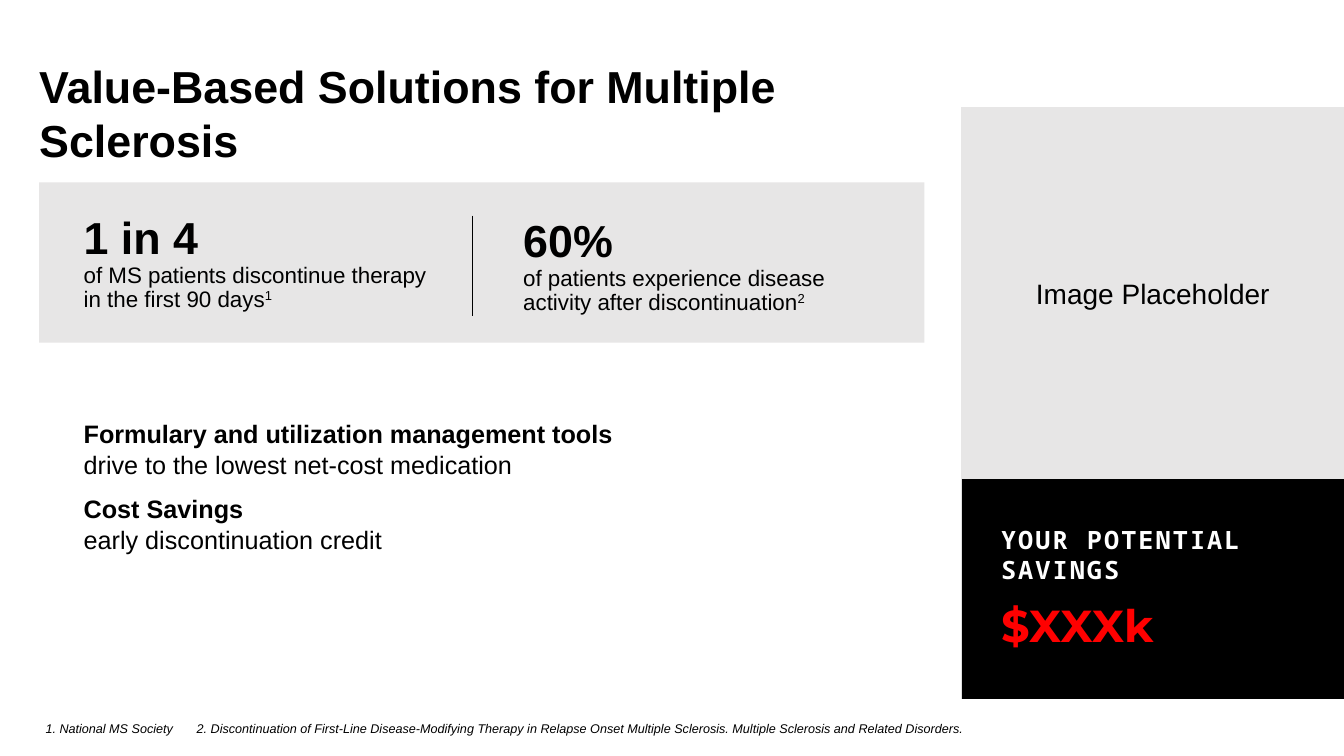
from dataclasses import dataclass

from lxml import etree
from pptx import Presentation
from pptx.dml.color import RGBColor
from pptx.enum.shapes import MSO_CONNECTOR, MSO_SHAPE
from pptx.enum.text import MSO_ANCHOR, PP_ALIGN
from pptx.oxml.ns import qn
from pptx.shapes.autoshape import Shape
from pptx.slide import Slide
from pptx.text.text import TextFrame
from pptx.util import Pt

RECT, STRAIGHT = MSO_SHAPE.RECTANGLE, MSO_CONNECTOR.STRAIGHT
TOP, MIDDLE, BOTTOM = MSO_ANCHOR.TOP, MSO_ANCHOR.MIDDLE, MSO_ANCHOR.BOTTOM
CENTER = PP_ALIGN.CENTER

BLACK = RGBColor(0x00, 0x00, 0x00)
WHITE = RGBColor(0xFF, 0xFF, 0xFF)
GREY = RGBColor(0xE7, 0xE6, 0xE6)
RED = RGBColor(0xFF, 0x00, 0x00)

BREAK = "\n"
MARGIN, INDENT = 28, 59.75
SIDE_LEFT, SIDE_WIDTH = 687, 273


@dataclass
class Run:
    text: str
    size: float
    bold: bool = False
    italic: bool = False
    color: RGBColor = BLACK
    font: str = "Arial"
    spacing: float = 0
    superscript: bool = False


@dataclass
class Para:
    runs: list[Run]
    format: dict
    tab: float = 0


@dataclass
class Box:
    left: float
    top: float
    width: float
    height: float


@dataclass
class TextBox:
    box: Box
    paras: list[Para]
    anchor: MSO_ANCHOR = TOP
    insets: tuple[float, float, float, float] = (0, 0, 0, 0)


@dataclass
class Panel:
    box: Box
    fill: RGBColor


def fill_text(tf: TextFrame, paras: list[Para]) -> None:
    for i, para in enumerate(paras):
        p = tf.paragraphs[0] if i == 0 else tf.add_paragraph()
        for name, value in para.format.items():
            setattr(p, name, value)
        if para.tab:
            tabs = etree.SubElement(p._p.get_or_add_pPr(), qn("a:tabLst"))
            etree.SubElement(tabs, qn("a:tab"), pos=str(Pt(para.tab)), algn="l")
        for run in para.runs:
            if run.text == BREAK:
                p.add_line_break()
                continue
            r = p.add_run()
            r.text = run.text
            font = {"name": run.font, "size": Pt(run.size),
                    "bold": run.bold, "italic": run.italic}
            for name, value in font.items():
                setattr(r.font, name, value)
            r.font.color.rgb = run.color
            rPr = r._r.get_or_add_rPr()
            if run.spacing:
                rPr.set("spc", str(int(run.spacing * 100)))
            if run.superscript:
                rPr.set("baseline", "30000")


def add_text(s: Slide, item: TextBox) -> None:
    b = item.box
    tf = s.shapes.add_textbox(Pt(b.left), Pt(b.top), Pt(b.width), Pt(b.height)).text_frame
    tf.word_wrap = True
    tf.vertical_anchor = item.anchor
    for side, inset in zip(("left", "top", "right", "bottom"), item.insets):
        setattr(tf, f"margin_{side}", Pt(inset))
    fill_text(tf, item.paras)


def add_panel(s: Slide, panel: Panel) -> Shape:
    b = panel.box
    sp = s.shapes.add_shape(RECT, Pt(b.left), Pt(b.top), Pt(b.width), Pt(b.height))
    sp.shadow.inherit = False
    sp.fill.solid()
    sp.fill.fore_color.rgb = panel.fill
    sp.line.fill.background()
    return sp


def add_divider(s: Slide, x: float, top: float, bottom: float) -> None:
    line = s.shapes.add_connector(STRAIGHT, Pt(x), Pt(top), Pt(x), Pt(bottom))
    line.line.color.rgb = BLACK
    line.line.width = Pt(0.5)
    etree.SubElement(line._element.spPr, qn("a:effectLst"))


def statistic(box: Box, figure: str, lines: tuple[str, str], note: str) -> TextBox:
    tight = {"line_spacing": 0.9}
    first, second = lines
    return TextBox(box, [
        Para([Run(figure, 32, bold=True)], tight),
        Para([Run(first, 16), Run(BREAK, 16), Run(second, 16),
              Run(note, 16, superscript=True)], tight),
    ])


def benefit(top: float, heading: str, detail: str) -> TextBox:
    runs = [Run(heading, 18, bold=True), Run(BREAK, 18), Run(detail, 18)]
    return TextBox(Box(INDENT, top, 564, 51), [Para(runs, {})],
                   insets=(0, 3.6, 7.2, 3.6))


STATS_PANEL = Panel(Box(MARGIN, 130.25, 632.25, 114.5), GREY)
SAVINGS_PANEL = Panel(Box(SIDE_LEFT, 341.75, SIDE_WIDTH, 157.5), BLACK)
IMAGE_PANEL = Panel(Box(SIDE_LEFT, 77, SIDE_WIDTH, 264.75), GREY)

TEXTS = [
    TextBox(Box(MARGIN, 41, 649.5, 79.25),
            [Para([Run("Value-Based Solutions for Multiple Sclerosis", 32, bold=True)], {})],
            anchor=MIDDLE),
    statistic(Box(INDENT, 154, 262, 70), "1 in 4",
              ("of MS patients discontinue therapy", "in the first 90 days"), "1"),
    statistic(Box(373.75, 156, 221, 70), "60%",
              ("of patients experience disease", "activity after discontinuation"), "2"),
    benefit(295.5, "Formulary and utilization management tools",
            "drive to the lowest net-cost medication"),
    benefit(349, "Cost Savings", "early discontinuation credit"),
    TextBox(Box(715, 374.5, 217.5, 91.5), [
        Para([Run("YOUR POTENTIAL SAVINGS", 18, bold=True, color=WHITE,
                  font="Noto Sans Mono", spacing=1.5)], {"space_after": Pt(6)}),
        Para([Run("$XXXk", 32, bold=True, color=RED, font="Montserrat")],
             {"space_before": Pt(3)}),
    ]),
    TextBox(Box(32.5, 510.5, 903.5, 15), [
        Para([Run("1. National MS Society\t2. Discontinuation of First-Line "
                  "Disease-Modifying Therapy in Relapse Onset Multiple Sclerosis. "
                  "Multiple Sclerosis and Related Disorders.", 9, italic=True)],
             {"line_spacing": 1.2}, tab=108),
    ], anchor=BOTTOM),
]


def main() -> None:
    prs = Presentation()
    prs.slide_width, prs.slide_height = Pt(960), Pt(540)
    s = prs.slides.add_slide(prs.slide_layouts[6])

    add_panel(s, STATS_PANEL)
    add_panel(s, SAVINGS_PANEL)
    image = add_panel(s, IMAGE_PANEL)
    image.line.color.rgb = GREY
    image.line.width = Pt(1)
    image.text_frame.vertical_anchor = MIDDLE
    fill_text(image.text_frame,
              [Para([Run("Image Placeholder", 20)], {"alignment": CENTER})])

    add_divider(s, 337.75, 154, 226)
    for item in TEXTS:
        add_text(s, item)
    prs.save("out.pptx")


if __name__ == "__main__":
    main()
